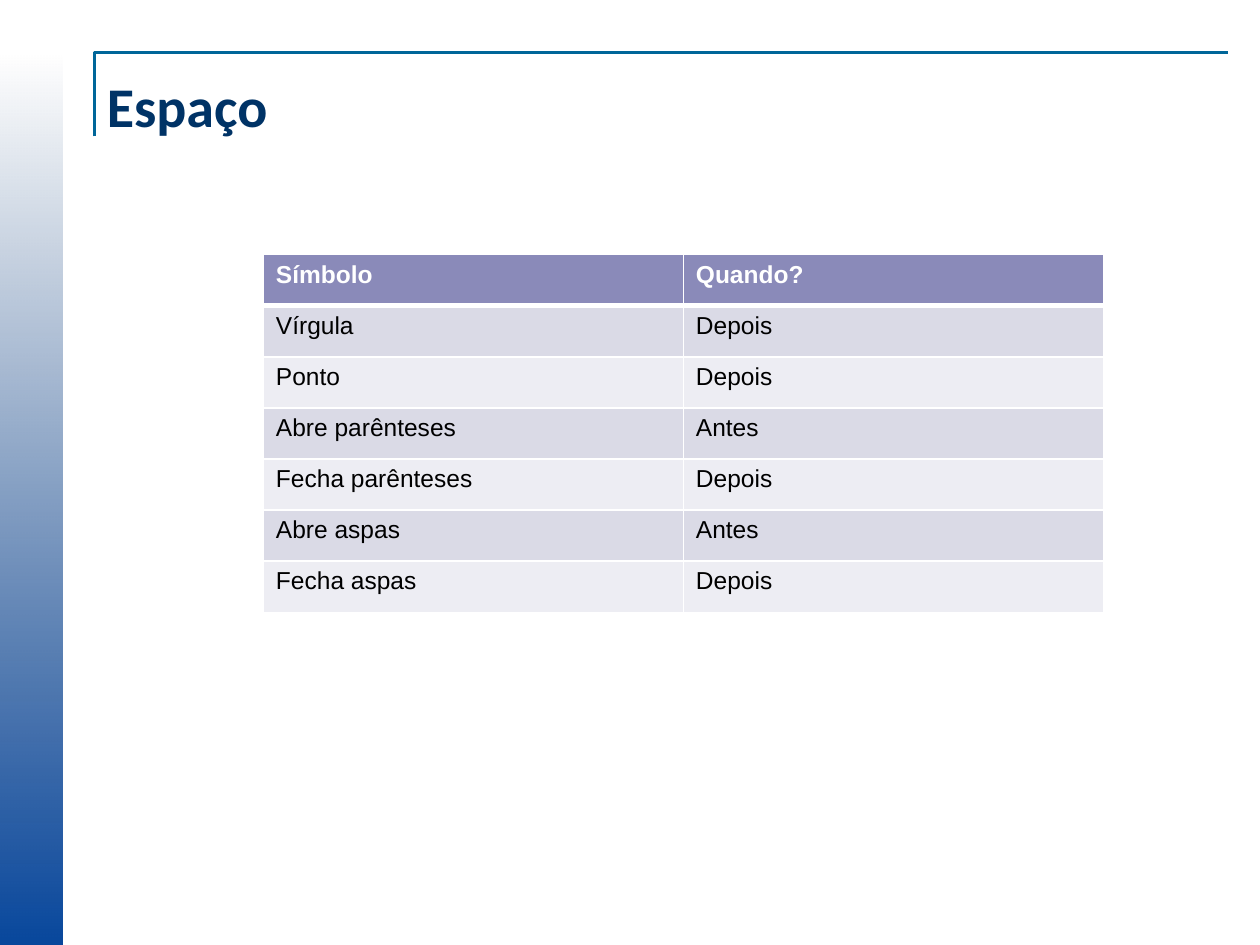
from lxml.etree import SubElement
from pptx import Presentation
from pptx.dml.color import RGBColor
from pptx.enum.shapes import MSO_SHAPE as SHAPE
from pptx.enum.text import MSO_ANCHOR as ANCHOR
from pptx.oxml import parse_xml
from pptx.oxml.ns import nsdecls, qn
from pptx.util import Pt

# Content
TITLE = "Espaço"
ROWS = [
    ("Símbolo", "Quando?"),
    ("Vírgula", "Depois"),
    ("Ponto", "Depois"),
    ("Abre parênteses", "Antes"),
    ("Fecha parênteses", "Depois"),
    ("Abre aspas", "Antes"),
    ("Fecha aspas", "Depois"),
]
HEADER_FILL, BANDS = "8A8AB9", ("DADAE6", "EDEDF3")

# Layout, in points
WIDTH, HEIGHT = 720, 540
FRAME_LEFT, FRAME_TOP, FRAME_RIGHT, FRAME_BOTTOM = 54, 30, 702, 78
BAR_WIDTH = 36
TABLE_LEFT, TABLE_TOP, COL_WIDTH, ROW_HEIGHT = 150.5, 145.5, 240, 29.2


def rgb(color):
    return RGBColor.from_string(color)


def set_font(p, name, size, color, bold):
    p.font.name, p.font.size, p.font.bold = name, Pt(size), bold
    p.font.color.rgb = rgb(color)


def set_borders(cell, **widths):
    tcPr = cell._tc.get_or_add_tcPr()
    for i, side in enumerate("LRTB"):
        width = Pt(widths.get(side, 1))
        tcPr.insert(i, parse_xml(
            f'<a:ln{side} {nsdecls("a")} w="{width}"><a:solidFill>'
            f'<a:srgbClr val="FFFFFF"/></a:solidFill></a:ln{side}>'))


prs = Presentation()
prs.slide_width, prs.slide_height = Pt(WIDTH), Pt(HEIGHT)
slide = prs.slides.add_slide(prs.slide_layouts[6])
shapes = slide.shapes

# Side bar fading out towards the top
bar = shapes.add_shape(SHAPE.RECTANGLE, 0, Pt(FRAME_TOP),
                       Pt(BAR_WIDTH), Pt(HEIGHT - FRAME_TOP))
bar.shadow.inherit = False
bar.line.fill.background()
bar.fill.gradient()
bar.fill.gradient_angle = 90
for stop, color in zip(bar.fill.gradient_stops, ("08479C", "063370")):
    stop.color.rgb = rgb(color)
top_color = list(bar._element.spPr.iter(qn("a:srgbClr")))[-1]
SubElement(top_color, qn("a:alpha")).set("val", "0")

# Corner line around the title
builder = shapes.build_freeform(Pt(FRAME_LEFT), Pt(FRAME_BOTTOM))
builder.add_line_segments([(Pt(FRAME_LEFT), Pt(FRAME_TOP)),
                           (Pt(FRAME_RIGHT), Pt(FRAME_TOP))], close=False)
corner = builder.convert_to_shape()
corner.shadow.inherit = False
corner.fill.background()
corner.line.color.rgb = rgb("006699")
corner.line.width = Pt(1.5)

# Title
tf = shapes.add_textbox(Pt(FRAME_LEFT), Pt(FRAME_TOP), Pt(642), Pt(60)).text_frame
tf.word_wrap = True
tf.vertical_anchor = ANCHOR.MIDDLE
tf.text = TITLE
set_font(tf.paragraphs[0], "Calibri", 32, "003366", True)

# Table
cols = len(ROWS[0])
table = shapes.add_table(len(ROWS), cols, Pt(TABLE_LEFT), Pt(TABLE_TOP),
                         Pt(COL_WIDTH * cols), Pt(ROW_HEIGHT * len(ROWS))).table
for col in table.columns:
    col.width = Pt(COL_WIDTH)
for i, row in enumerate(ROWS):
    table.rows[i].height = Pt(ROW_HEIGHT)
    header = i == 0
    for j, text in enumerate(row):
        cell = table.cell(i, j)
        cell.text = text
        set_font(cell.text_frame.paragraphs[0], "Arial", 14,
                 "FFFFFF" if header else "000000", header)
        cell.fill.solid()
        cell.fill.fore_color.rgb = rgb(HEADER_FILL if header else BANDS[(i - 1) % 2])
        set_borders(cell, T=3 if i == 1 else 1, B=3 if header else 1)

prs.save("out.pptx")
